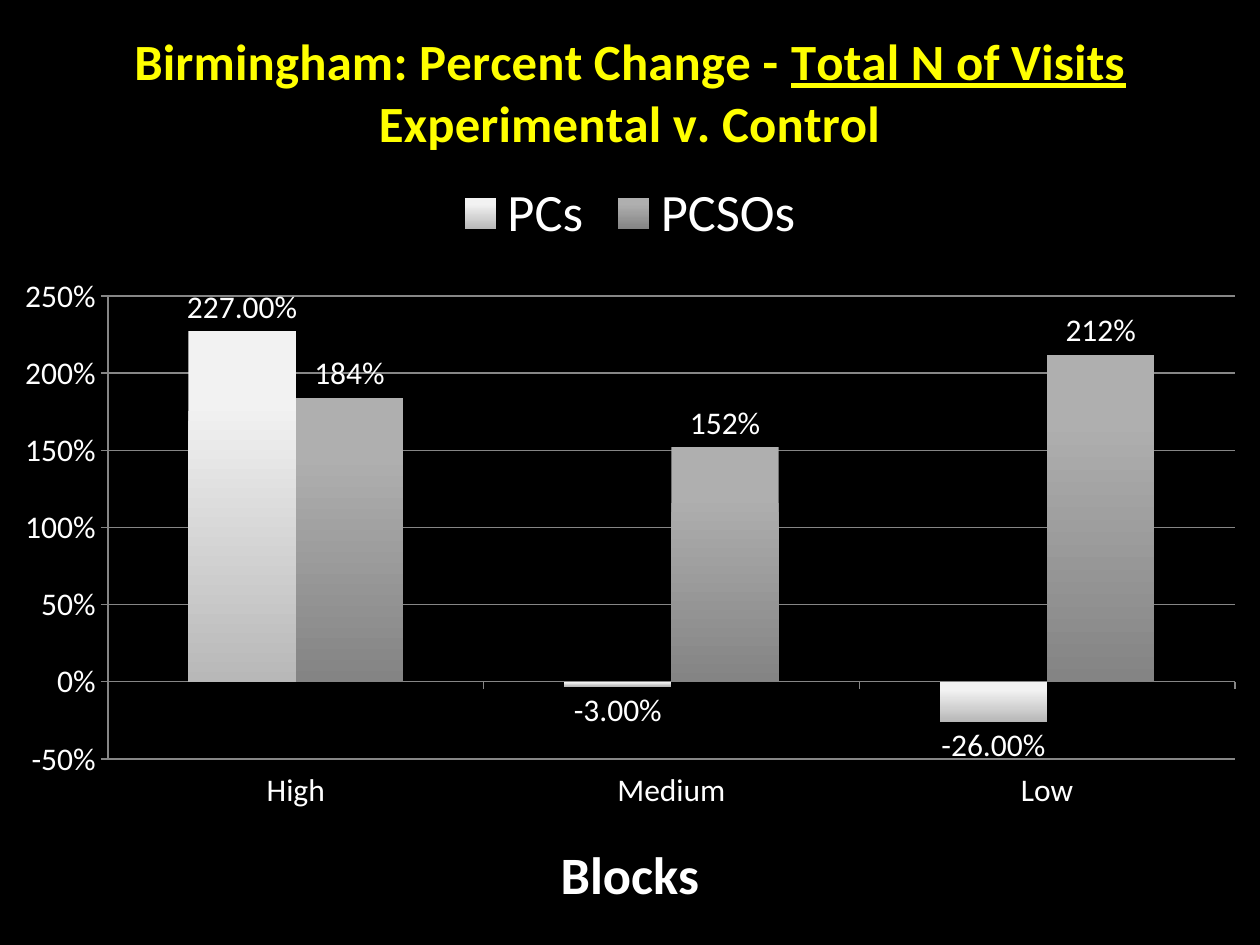
from lxml import etree
from pptx import Presentation
from pptx import util as u
from pptx.chart.data import CategoryChartData
from pptx.dml.color import RGBColor
from pptx.enum import chart as ch
from pptx.oxml.ns import qn

WIDTH, HEIGHT = 1260, 945
WHITE, YELLOW, BLACK, GREY = "FFFFFF", "FFFF00", "000000", "868686"
BLOCKS = ["High", "Medium", "Low"]
OFFICERS = [
    ("PCs", [2.27, -0.03, -0.26], "0.00%", ("F2F2F2", "B8B8B8")),
    ("PCSOs", [1.84, 1.52, 2.12], "0%", ("AFAFAF", "848484")),
]
HEADING = [
    [("Birmingham: Percent Change - ", False), ("Total N of Visits", True)],
    [("Experimental v. Control", False)],
]


def px(length):
    """Turn px into EMU."""
    return u.Emu(round(length * 914400 / 126))


def rgb(value):
    """Turn a hex string into a colour."""
    return RGBColor.from_string(value)


def style(font, color=WHITE, **values):
    """Apply format values to a font."""
    font.color.rgb = rgb(color)
    for name, value in {"name": "Calibri", **values}.items():
        setattr(font, name, value)


def write(frame, lines, color, **values):
    """Fill a text frame with lines of (wording, underline) runs."""
    for index, line in enumerate(lines):
        paragraph = frame.add_paragraph() if index else frame.paragraphs[0]
        for wording, underline in line:
            run = paragraph.add_run()
            run.text = wording
            style(run.font, color, underline=underline, bold=True, **values)


def place_plot(chart, left, top, width, height):
    """Fix the inner plot area within the chart, in px."""
    plot_area = chart.element.find(".//" + qn("c:plotArea"))
    for old in plot_area.findall(qn("c:layout")):
        plot_area.remove(old)
    layout = etree.Element(qn("c:layout"))
    manual = etree.SubElement(layout, qn("c:manualLayout"))
    values = {"layoutTarget": "inner", "xMode": "edge", "yMode": "edge",
              "x": left / WIDTH, "y": top / HEIGHT,
              "w": width / WIDTH, "h": height / HEIGHT}
    for name, value in values.items():
        etree.SubElement(manual, qn("c:" + name)).set("val", str(value))
    plot_area.insert(0, layout)


def format_axes(chart):
    """Format both axes, the gridlines and the block title."""
    blocks, change = chart.category_axis, chart.value_axis
    for axis in (blocks, change):
        axis.major_tick_mark = ch.XL_TICK_MARK.OUTSIDE
        axis.minor_tick_mark = ch.XL_TICK_MARK.NONE
        axis.format.line.color.rgb = rgb(GREY)
        style(axis.tick_labels.font, size=u.Pt(18))
    blocks.tick_label_position = ch.XL_TICK_LABEL_POSITION.LOW
    write(blocks.axis_title.text_frame, [[("Blocks", False)]], WHITE, size=u.Pt(30))
    scale = {"minimum_scale": -0.5, "maximum_scale": 2.5, "major_unit": 0.5,
             "has_major_gridlines": True}
    for name, value in scale.items():
        setattr(change, name, value)
    change.major_gridlines.format.line.color.rgb = rgb(GREY)
    change.tick_labels.number_format = "0%"
    change.tick_labels.number_format_is_linked = False


def format_series(series, number_format, shades):
    """Give one series its gradient and value labels."""
    series.invert_if_negative = False
    fill = series.format.fill
    fill.gradient()
    fill.gradient_angle = 270
    for stop, shade, position in zip(fill.gradient_stops, shades, (0.2, 1)):
        stop.color.rgb = rgb(shade)
        stop.position = position
    labels = series.data_labels
    values = {"show_value": True, "number_format": number_format,
              "number_format_is_linked": False,
              "position": ch.XL_LABEL_POSITION.OUTSIDE_END}
    for name, value in values.items():
        setattr(labels, name, value)
    style(labels.font, size=u.Pt(18))


def visits_chart(slide, left, top, width, height):
    """Draw the change in visits as clustered columns."""
    data = CategoryChartData()
    data.categories = BLOCKS
    for name, values, number_format, _ in OFFICERS:
        data.add_series(name, values, number_format)
    chart = slide.shapes.add_chart(
        ch.XL_CHART_TYPE.COLUMN_CLUSTERED,
        px(left), px(top), px(width), px(height), data).chart
    style(chart.font, size=u.Pt(18))
    write(chart.chart_title.text_frame, HEADING, YELLOW, size=u.Pt(29))
    chart.chart_title.include_in_layout = False
    chart.has_legend = True
    chart.legend.position = ch.XL_LEGEND_POSITION.TOP
    chart.legend.include_in_layout = False
    style(chart.legend.font, size=u.Pt(30))
    plot = chart.plots[0]
    plot.gap_width, plot.overlap, plot.vary_by_categories = 150, 0, False
    format_axes(chart)
    for series, (_, _, number_format, shades) in zip(plot.series, OFFICERS):
        format_series(series, number_format, shades)
    place_plot(chart, 108, 296, 1127, 463)


def main():
    """Build and save the slide."""
    deck = Presentation()
    deck.slide_width, deck.slide_height = px(WIDTH), px(HEIGHT)
    slide = deck.slides.add_slide(deck.slide_layouts[6])
    slide.background.fill.solid()
    slide.background.fill.fore_color.rgb = rgb(BLACK)
    visits_chart(slide, 0, 0, WIDTH, HEIGHT)
    deck.save("out.pptx")


if __name__ == "__main__":
    main()
